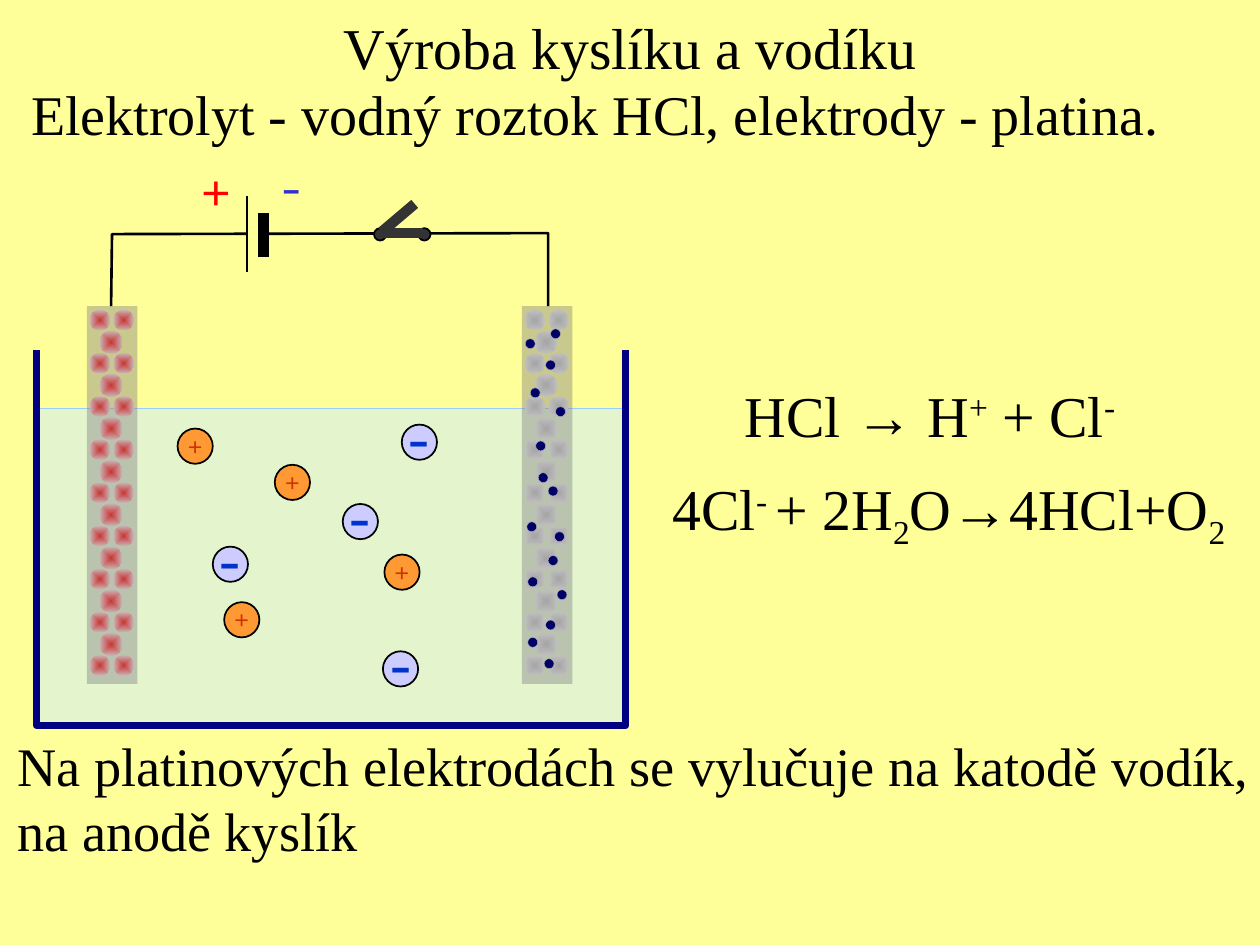
from dataclasses import dataclass

from lxml.etree import SubElement
from pptx import Presentation
from pptx.dml.color import RGBColor as RGB
from pptx.enum.shapes import MSO_CONNECTOR as Link, MSO_SHAPE as Form
from pptx.enum.text import MSO_ANCHOR as Anchor, MSO_AUTO_SIZE as Fit, PP_ALIGN as Align
from pptx.oxml.ns import qn
from pptx.util import Cm, Pt


@dataclass
class Theme:
    page: str = "FFFF99"
    ink: str = "000000"
    fluid: str = "CCECFF"
    brim: str = "99CCFF"
    glass: str = "000080"
    metal: str = "808080"
    lever: str = "333333"
    anode: tuple = ("FF0000", "FFDADA")
    cathode: tuple = ("C0C0C0", "EEEEEE")
    dot: str = "000066"
    rim: str = "B2B2B2"
    cation: str = "FF9933"
    anion: str = "CCCCFF"
    plus: str = "CC3300"
    minus: str = "0033CC"
    pole_plus: str = "FF0000"
    pole_minus: str = "3333CC"
    serif: str = "Times New Roman"
    sans: str = "Montserrat"
    head: int = 33
    lead: int = 32
    note: int = 31
    pole: int = 32
    plus_size: int = 16
    minus_size: int = 36


def draw(form, box, fill, edge=None, width=1, alpha=None):
    """Add a shape; a pair of colours as fill runs from centre to rim."""
    shape = shapes.add_shape(form, *map(Cm, box))
    shape.shadow.inherit = False
    if isinstance(fill, tuple):
        shape.fill.gradient()
        for stop, tone in zip(shape.fill.gradient_stops, fill):
            stop.color.rgb = RGB.from_string(tone)
        grad = shape._element.spPr.find(qn("a:gradFill"))
        grad.remove(grad.find(qn("a:lin")))
        way = SubElement(grad, qn("a:path"), {"path": "shape"})
        SubElement(way, qn("a:fillToRect"), dict.fromkeys("ltrb", "50000"))
    else:
        shape.fill.solid()
        shape.fill.fore_color.rgb = RGB.from_string(fill)
    if alpha:
        tint = shape._element.spPr.find(qn("a:solidFill"))[0]
        SubElement(tint, qn("a:alpha"), {"val": str(alpha * 1000)})
    if edge:
        shape.line.color.rgb = RGB.from_string(edge)
        shape.line.width = Pt(width)
    else:
        shape.line.fill.background()
    return shape


def write(shape, *lines, size, font=None, color=None, align=Align.LEFT, wrap=False,
          anchor=Anchor.TOP, fit=Fit.SHAPE_TO_FIT_TEXT, pad=(0.25, 0.13, 0.25, 0.13),
          space=None):
    """Fill a shape with lines, each a string or a list of (text, baseline %)."""
    frame = shape.text_frame
    frame.word_wrap, frame.auto_size, frame.vertical_anchor = wrap, fit, anchor
    (frame.margin_left, frame.margin_top,
     frame.margin_right, frame.margin_bottom) = map(Cm, pad)
    for i, line in enumerate(lines):
        para = frame.add_paragraph() if i else frame.paragraphs[0]
        para.alignment = align
        para.line_spacing = space
        for text, shift in [(line, 0)] if isinstance(line, str) else line:
            run = para.add_run()
            run.text = text
            run.font.size = Pt(size)
            run.font.name = font or theme.serif
            run.font.color.rgb = RGB.from_string(color or theme.ink)
            if shift:
                run._r.get_or_add_rPr().set("baseline", str(shift * 1000))


theme = Theme()
deck = Presentation()
deck.slide_width, deck.slide_height = Cm(25.4), Cm(19.05)
slide = deck.slides.add_slide(deck.slide_layouts[5])
slide.background.fill.solid()
slide.background.fill.fore_color.rgb = RGB.from_string(theme.page)
shapes = slide.shapes

# Title
title = shapes.title
title.left, title.top, title.width, title.height = map(Cm, (1.07, 0.1, 23.27, 1.68))
write(title, "Výroba kyslíku a vodíku", size=theme.head, align=Align.CENTER, wrap=True)

# Electrolyte
draw(Form.RECTANGLE, (0.74, 8.23, 11.91, 6.38), theme.fluid, theme.brim, 0.75, alpha=52)

# Electrodes: pairs of small atoms with a large one between the rows
step = 0.87
for left, tones in ((10.52, theme.cathode), (1.75, theme.anode)):
    for row in range(9):
        if row < 8:
            draw(Form.OVAL, (left + 0.26, 6.67 + row * step, 0.46, 0.46), tones)
        for gap in (0.06, 0.54):
            draw(Form.OVAL, (left + gap, 6.25 + row * step, 0.41, 0.41), tones)
    draw(Form.RECTANGLE, (left, 6.17, 1.02, 7.62), theme.metal, alpha=42)

# Wire and tank
wire = [(2.24, 6.17), (2.26, 4.72), (11.05, 4.7), (11.05, 6.17)]
tank = [(0.74, 7.06), (0.74, 14.63), (12.62, 14.63), (12.62, 7.06)]
for points, tone, width in ((wire, theme.ink, 1.5), (tank, theme.glass, 4)):
    first, *rest = [(Cm(x), Cm(y)) for x, y in points]
    pen = shapes.build_freeform(*first)
    pen.add_line_segments(rest, close=False)
    trace = pen.convert_to_shape()
    trace.shadow.inherit = False
    trace.fill.background()
    trace.line.color.rgb = RGB.from_string(tone)
    trace.line.width = Pt(width)

# Battery and switch
for gap in ((5, 4.11, 0.25, 1.24), (7.76, 4.57, 0.74, 0.25)):
    draw(Form.RECTANGLE, gap, theme.page)
for left in (8.43, 7.54):
    draw(Form.OVAL, (left, 4.6, 0.25, 0.25), theme.lever, theme.ink)
for x1, y1, x2, y2, tone, width in (
    (4.98, 3.96, 4.98, 5.49, theme.ink, 1.5),
    (5.31, 4.29, 5.31, 5.18, theme.ink, 6),
    (7.67, 4.7, 8.53, 4.7, theme.lever, 6),
    (7.7, 4.67, 8.36, 4.11, theme.lever, 6),
):
    bar = shapes.add_connector(Link.STRAIGHT, *map(Cm, (x1, y1, x2, y2)))
    bar.line.color.rgb = RGB.from_string(tone)
    bar.line.width = Pt(width)
    SubElement(bar._element.spPr, qn("a:effectLst"))

# Electrons on the cathode
for x, y in (
    (10.59, 6.83), (11.1, 6.63), (10.8, 8.89), (10.62, 10.52),
    (10.97, 13.28), (10.69, 7.82), (11, 7.26), (10.85, 9.53),
    (11.05, 9.8), (11.18, 10.72), (11.2, 8.2), (11, 12.5),
    (11.23, 11.89), (10.64, 12.85), (10.64, 11.63), (11.05, 11.2),
):
    draw(Form.OVAL, (x, y, 0.2, 0.2), theme.dot, theme.rim, 0.25)

# Ions
plus = dict(size=theme.plus_size, font=theme.sans, color=theme.plus)
minus = dict(size=theme.minus_size, color=theme.minus, pad=(0.25, 0.2, 0.25, 0.53))
for sign, fill, style, spots in (
    ("+", theme.cation, plus,
     ((5.54, 9.37), (4.52, 12.14), (7.75, 11.18), (3.58, 8.64))),
    ("-", theme.anion, minus,
     ((4.29, 11.02), (8.1, 8.56), (6.91, 10.16), (7.72, 13.13))),
):
    for x, y in spots:
        ion = draw(Form.OVAL, (x, y, 0.71, 0.71), fill, theme.ink)
        write(ion, sign, align=Align.CENTER, anchor=Anchor.MIDDLE, fit=Fit.NONE, **style)

# Texts
split = [("HCl → H", 0), ("+", 30), (" + Cl", 0), ("-", 30)]
react = [("4Cl", 0), ("- ", 30), ("+ 2H", 0), ("2", -25), ("O→4HCl+O", 0), ("2", -25)]
for box, lines, style in (
    ((3.78, 3.05, 1.24, 1.6), ["+"],
     dict(size=theme.pole, font=theme.sans, color=theme.pole_plus)),
    ((5.41, 2.92, 0.89, 1.6), ["-"],
     dict(size=theme.pole, font=theme.sans, color=theme.pole_minus)),
    ((0.38, 1.63, 23.47, 1.5), ["Elektrolyt - vodný roztok HCl, elektrody - platina."],
     dict(size=theme.lead, space=0.9)),
    ((14.76, 7.52, 8.05, 1.65), [split], dict(size=theme.head)),
    ((13.31, 9.4, 11.71, 1.65), [react], dict(size=theme.head)),
    ((0.2, 14.63, 25.4, 2.9),
     ["Na platinových elektrodách se vylučuje na katodě vodík,", "na anodě kyslík"],
     dict(size=theme.note, pad=(0.15, 0.13, 0.15, 0.13))),
):
    write(shapes.add_textbox(*map(Cm, box)), *lines, **style)

deck.save("out.pptx")
